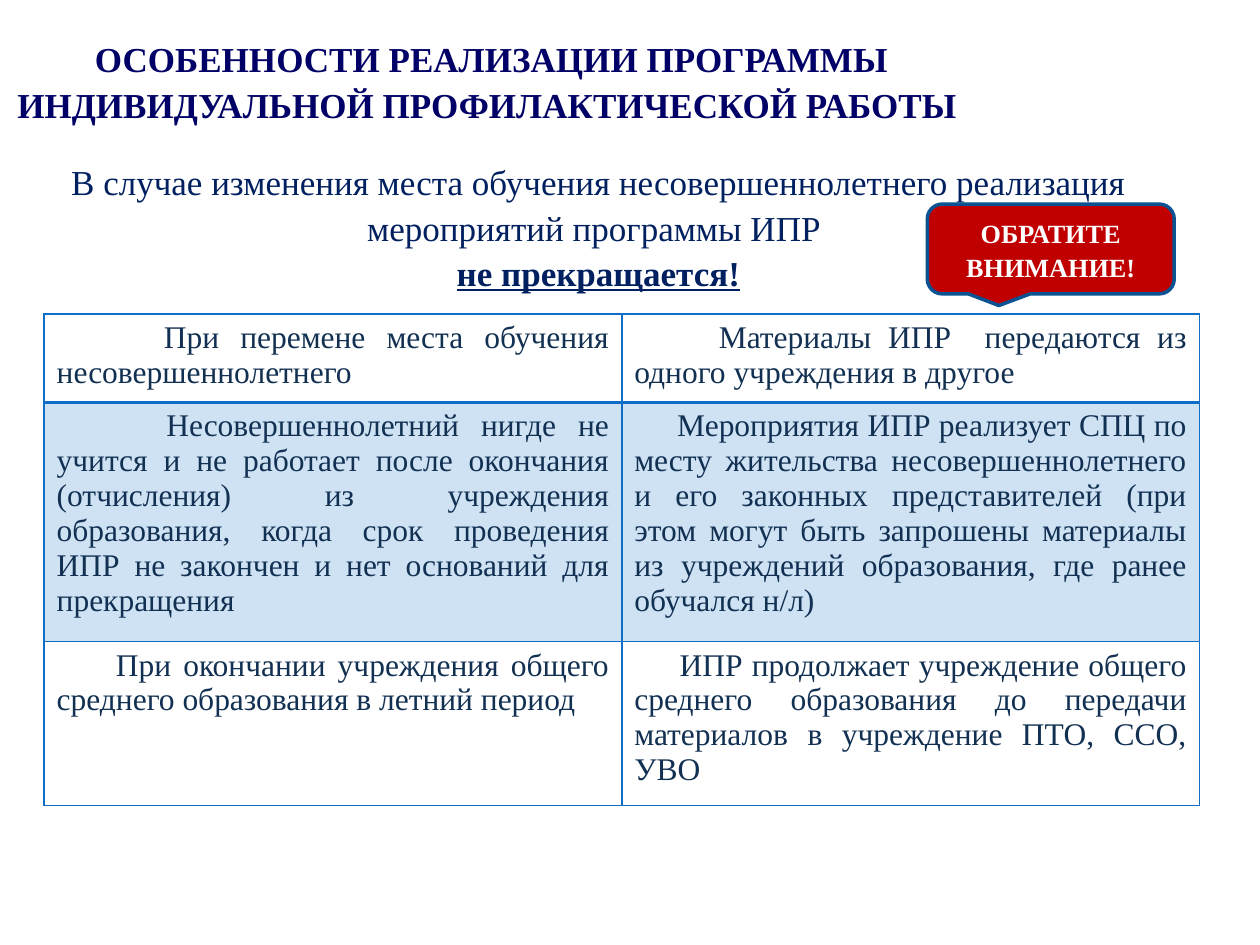
from lxml.etree import SubElement
from pptx import Presentation
from pptx.dml.color import RGBColor
from pptx.enum.shapes import MSO_SHAPE
from pptx.enum.text import MSO_ANCHOR, PP_ALIGN
from pptx.oxml.ns import qn
from pptx.util import Inches, Pt

WIDTH, HEIGHT = Inches(10), Inches(7.5)
FONT = "Times New Roman"
COLORS = {
    "title": "000066", "body": "002060", "cell": "113052", "grid": "0F6FC6",
    "band": "CFE2F4", "plain": "FFFFFF", "callout": "C00000", "outline": "0B5292",
}
ROW_SHARES = (0.18, 0.487, 0.333)
# Each cell: first-line indent in inches, text
ROWS = (
    ((0.85, "При перемене места обучения несовершеннолетнего"),
     (0.67, "Материалы ИПР  передаются из одного учреждения в другое")),
    ((0.87, "Несовершеннолетний нигде не учится и не работает после окончания "
            "(отчисления) из учреждения образования, когда срок проведения ИПР "
            "не закончен и нет оснований для прекращения"),
     (0.34, "Мероприятия ИПР реализует СПЦ по месту жительства несовершеннолетнего "
            "и его законных представителей (при этом могут быть запрошены материалы "
            "из учреждений образования, где ранее обучался н/л)")),
    ((0.47, "При окончании учреждения общего среднего образования в летний период"),
     (0.36, "ИПР продолжает учреждение общего среднего образования до передачи "
            "материалов в учреждение ПТО, ССО, УВО")),
)


def color(name):
    return RGBColor.from_string(COLORS[name])


def area(left, top, width, height):
    """Turn shares of the slide into a box in EMU."""
    return (int(left * WIDTH), int(top * HEIGHT),
            int(width * WIDTH), int(height * HEIGHT))


def style_paragraph(paragraph, size, color_name, bold=False, underline=False,
                    alignment=PP_ALIGN.CENTER, spacing=1.08):
    paragraph.alignment = alignment
    paragraph.line_spacing = spacing
    for run in paragraph.runs:
        font = run.font
        font.name, font.size, font.bold = FONT, Pt(size), bold
        font.underline = underline
        font.color.rgb = color(color_name)


def add_text(slide, box, text):
    text_frame = slide.shapes.add_textbox(*box).text_frame
    text_frame.word_wrap = True
    text_frame.text = text
    return text_frame.paragraphs


def add_title(slide, box):
    paragraph, = add_text(slide, box, "ОСОБЕННОСТИ РЕАЛИЗАЦИИ ПРОГРАММЫ "
                          "ИНДИВИДУАЛЬНОЙ ПРОФИЛАКТИЧЕСКОЙ РАБОТЫ ")
    style_paragraph(paragraph, 20, "title", bold=True)


def add_statement(slide, box):
    opening, conclusion = add_text(
        slide, box, "В случае изменения места обучения несовершеннолетнего "
        "реализация мероприятий программы ИПР \nне прекращается!")
    style_paragraph(opening, 20, "body")
    style_paragraph(conclusion, 20, "body", bold=True, underline=True)


def set_borders(cell, widths):
    properties = cell._tc.get_or_add_tcPr()
    for side, width in widths.items():
        line = SubElement(properties, qn(f"a:ln{side}"), w=str(Pt(width)))
        fill = SubElement(line, qn("a:solidFill"))
        SubElement(fill, qn("a:srgbClr"), val=COLORS["grid"])


def add_cases_table(slide, box):
    table = slide.shapes.add_table(len(ROWS), len(ROWS[0]), *box).table
    table.first_row = table.horz_banding = False
    for row_index, cases in enumerate(ROWS):
        table.rows[row_index].height = int(box[3] * ROW_SHARES[row_index])
        for column_index, (indent, text) in enumerate(cases):
            cell = table.cell(row_index, column_index)
            set_borders(cell, {"L": 1, "R": 1, "T": 2 if row_index == 1 else 1,
                               "B": 2 if row_index == 0 else 1})
            cell.fill.solid()
            cell.fill.fore_color.rgb = color("band" if row_index == 1 else "plain")
            cell.text_frame.text = text
            paragraph = cell.text_frame.paragraphs[0]
            paragraph._p.get_or_add_pPr().set("indent", str(Inches(indent)))
            style_paragraph(paragraph, 18, "cell", alignment=PP_ALIGN.JUSTIFY,
                            spacing=1.0)


def add_callout(slide, box):
    shape = slide.shapes.add_shape(MSO_SHAPE.ROUNDED_RECTANGULAR_CALLOUT, *box)
    shape.shadow.inherit = False
    shape.adjustments[0], shape.adjustments[1] = -0.21, 0.63
    shape.fill.solid()
    shape.fill.fore_color.rgb = color("callout")
    shape.line.color.rgb = color("outline")
    shape.line.width = Pt(2)
    text_frame = shape.text_frame
    text_frame.vertical_anchor = MSO_ANCHOR.MIDDLE
    text_frame.text = "ОБРАТИТЕ\vВНИМАНИЕ!"
    style_paragraph(text_frame.paragraphs[0], 15, "plain", bold=True)


def main():
    presentation = Presentation()
    presentation.slide_width, presentation.slide_height = WIDTH, HEIGHT
    slide = presentation.slides.add_slide(presentation.slide_layouts[6])
    add_title(slide, area(-0.03, 0.03, 0.84, 0.1))
    add_statement(slide, area(0.04, 0.16, 0.87, 0.19))
    add_cases_table(slide, area(0.035, 0.332, 0.917, 0.52))
    add_callout(slide, area(0.736, 0.216, 0.196, 0.095))
    presentation.save("out.pptx")


if __name__ == "__main__":
    main()
